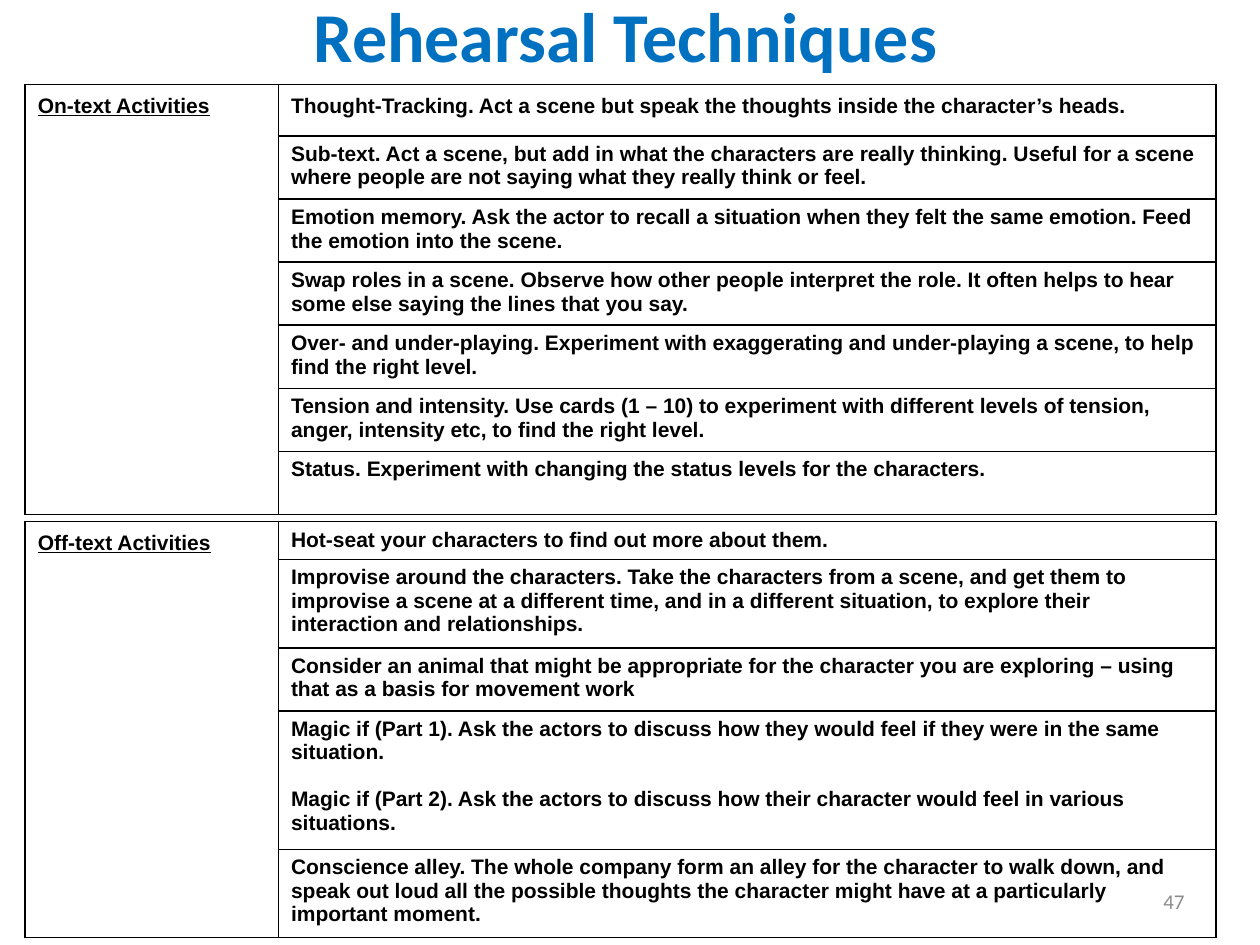
from dataclasses import dataclass

from lxml import etree
from pptx import Presentation
from pptx.dml.color import RGBColor
from pptx.enum.text import MSO_ANCHOR, PP_ALIGN
from pptx.oxml.ns import qn
from pptx.util import Inches, Pt

BLACK = RGBColor(0x00, 0x00, 0x00)
BLUE = RGBColor(0x00, 0x70, 0xC0)
GREY = RGBColor(0x8C, 0x8C, 0x8C)
CENTER, RIGHT = PP_ALIGN.CENTER, PP_ALIGN.RIGHT
TOP, MIDDLE = MSO_ANCHOR.TOP, MSO_ANCHOR.MIDDLE

SLIDE_WIDTH, SLIDE_HEIGHT = 10, 7.5
TABLE_LEFT = 0.2
COLUMNS = (2.01, 7.44)
BORDER_SIDES = ("a:lnL", "a:lnR", "a:lnT", "a:lnB")
BORDER_WIDTH = Pt(1)
PARAGRAPH_GAP = Pt(13.5)

TITLE_FONT = {"name": "Calibri", "size": Pt(40), "bold": True}
NUMBER_FONT = {"name": "Calibri", "size": Pt(12)}
BODY_FONT = {"name": "Arial", "size": Pt(12), "bold": True}
HEADING_FONT = BODY_FONT | {"underline": True}
LOOSE = {"line_spacing": 1.15, "space_after": Pt(10)}


@dataclass
class Label:
    text: str
    left: float
    top: float
    width: float
    height: float
    font: dict
    color: RGBColor
    alignment: PP_ALIGN
    anchor: MSO_ANCHOR


@dataclass
class Technique:
    height: float
    paragraphs: tuple
    spacing: dict


@dataclass
class Section:
    heading: str
    top: float
    techniques: tuple


LABELS = (
    Label("Rehearsal Techniques", 2.17, -0.11, 5.59, 0.77,
          TITLE_FONT, BLUE, CENTER, TOP),
    Label("47", 7.17, 6.95, 2.33, 0.4, NUMBER_FONT, GREY, RIGHT, MIDDLE),
)

SECTIONS = (
    Section("On-text Activities", 0.67, (
        Technique(0.41, ("Thought-Tracking. Act a scene but speak the thoughts "
                         "inside the character’s heads.",), LOOSE),
        Technique(0.5, ("Sub-text. Act a scene, but add in what the characters are "
                        "really thinking. Useful for a scene where people are not "
                        "saying what they really think or feel.",), {}),
        Technique(0.5, ("Emotion memory. Ask the actor to recall a situation when "
                        "they felt the same emotion. Feed the emotion into the "
                        "scene.",), {}),
        Technique(0.5, ("Swap roles in a scene. Observe how other people interpret "
                        "the role. It often helps to hear some else saying the "
                        "lines that you say.",), {}),
        Technique(0.5, ("Over- and under-playing. Experiment with exaggerating and "
                        "under-playing a scene, to help find the right level.",), {}),
        Technique(0.5, ("Tension and intensity. Use cards (1 – 10) to experiment "
                        "with different levels of tension, anger, intensity etc, "
                        "to find the right level.",), {}),
        Technique(0.5, ("Status. Experiment with changing the status levels for "
                        "the characters.",), {}),
    )),
    Section("Off-text Activities", 4.14, (
        Technique(0.3, ("Hot-seat your characters to find out more about "
                        "them.",), {}),
        Technique(0.7, ("Improvise around the characters. Take the characters from "
                        "a scene, and get them to improvise a scene at a different "
                        "time, and in a different situation, to explore their "
                        "interaction and relationships.",), {}),
        Technique(0.5, ("Consider an animal that might be appropriate for the "
                        "character you are exploring – using that as a basis for "
                        "movement work",), {}),
        Technique(1.1, ("Magic if (Part 1). Ask the actors to discuss how they "
                        "would feel if they were in the same situation.",
                        "Magic if (Part 2). Ask the actors to discuss how their "
                        "character would feel in various situations."), {}),
        Technique(0.7, ("Conscience alley. The whole company form an alley for the "
                        "character to walk down, and speak out loud all the "
                        "possible thoughts the character might have at a "
                        "particularly important moment.",), {}),
    )),
)


def apply_values(target, values: dict) -> None:
    for name, value in values.items():
        setattr(target, name, value)


def write_span(para, text: str, font: dict, color: RGBColor) -> None:
    span = para.add_run()
    span.text = text
    apply_values(span.font, font)
    span.font.color.rgb = color


def draw_label(page, label: Label) -> None:
    box = page.shapes.add_textbox(Inches(label.left), Inches(label.top),
                                  Inches(label.width), Inches(label.height))
    frame = box.text_frame
    apply_values(frame, {"word_wrap": True, "vertical_anchor": label.anchor})
    para = frame.paragraphs[0]
    para.alignment = label.alignment
    write_span(para, label.text, label.font, label.color)


def frame_cell(cell) -> None:
    properties = cell._tc.get_or_add_tcPr()
    for side in BORDER_SIDES:
        line = etree.SubElement(properties, qn(side), w=str(BORDER_WIDTH))
        fill = etree.SubElement(line, qn("a:solidFill"))
        etree.SubElement(fill, qn("a:srgbClr"), val=str(BLACK))
    cell.fill.background()


def fill_cell(cell, paragraphs: tuple, font: dict, spacing: dict) -> None:
    frame = cell.text_frame
    for index, text in enumerate(paragraphs):
        para = frame.add_paragraph() if index else frame.paragraphs[0]
        apply_values(para, spacing)
        if index:
            para.space_before = PARAGRAPH_GAP
        write_span(para, text, font, BLACK)


def draw_section(page, section: Section) -> None:
    count = len(section.techniques)
    height = sum(technique.height for technique in section.techniques)
    table = page.shapes.add_table(
        count, len(COLUMNS), Inches(TABLE_LEFT), Inches(section.top),
        Inches(sum(COLUMNS)), Inches(height)).table
    apply_values(table, {"first_row": False, "horz_banding": False})
    for column, width in zip(table.columns, COLUMNS):
        column.width = Inches(width)
    for cell in table.iter_cells():
        frame_cell(cell)
    table.cell(0, 0).merge(table.cell(count - 1, 0))
    fill_cell(table.cell(0, 0), (section.heading,), HEADING_FONT, LOOSE)
    for index, technique in enumerate(section.techniques):
        table.rows[index].height = Inches(technique.height)
        fill_cell(table.cell(index, 1), technique.paragraphs, BODY_FONT,
                  technique.spacing)


def main() -> None:
    deck = Presentation()
    deck.slide_width = Inches(SLIDE_WIDTH)
    deck.slide_height = Inches(SLIDE_HEIGHT)
    page = deck.slides.add_slide(deck.slide_layouts[6])
    for label in LABELS:
        draw_label(page, label)
    for section in SECTIONS:
        draw_section(page, section)
    deck.save("out.pptx")


if __name__ == "__main__":
    main()
